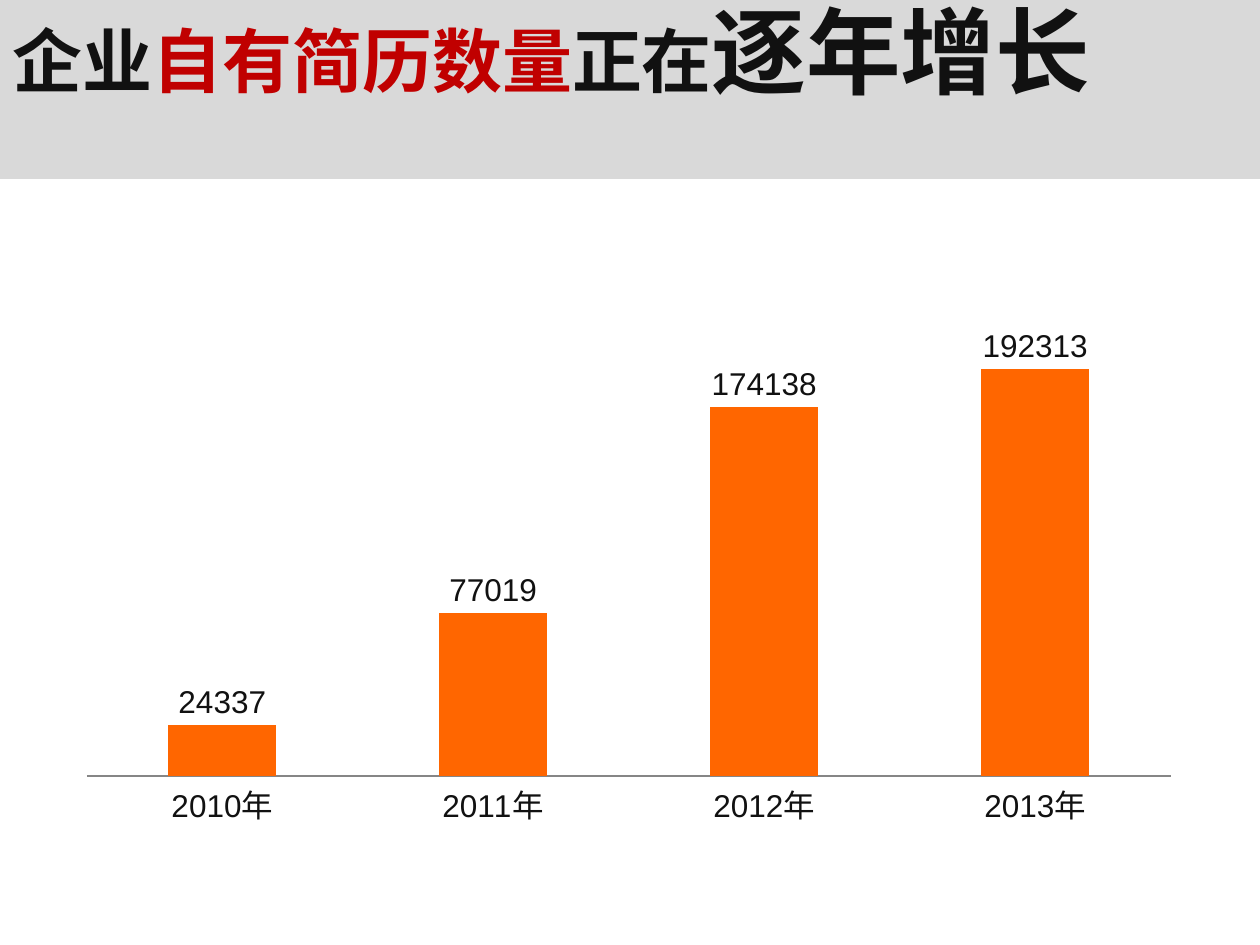
from pptx import Presentation
from pptx.chart.data import CategoryChartData
from pptx.dml.color import RGBColor
from pptx.enum.chart import XL_CHART_TYPE as ChartType, XL_LABEL_POSITION as LabelPosition, XL_TICK_MARK as TickMark
from pptx.enum.text import MSO_ANCHOR as Anchor, MSO_AUTO_SIZE as AutoSize, PP_ALIGN as Align
from pptx.oxml.ns import qn
from pptx.util import Pt

INK = RGBColor(0x11, 0x11, 0x11)
RED = RGBColor(0xC0, 0x00, 0x00)
ORANGE = RGBColor(0xFF, 0x66, 0x00)
BAND_GREY = RGBColor(0xD9, 0xD9, 0xD9)
AXIS_GREY = RGBColor(0x86, 0x86, 0x86)
TITLE_FONT = "Noto Sans CJK SC"

deck = Presentation()
deck.slide_width, deck.slide_height = Pt(720), Pt(540)
page = deck.slides.add_slide(deck.slide_layouts[5])

data = CategoryChartData()
data.categories = ["2010年", "2011年", "2012年", "2013年"]
data.add_series("Series 1", [24337, 77019, 174138, 192313])
chart = page.shapes.add_chart(
    ChartType.COLUMN_CLUSTERED, Pt(36.7), Pt(133.9), Pt(645.1), Pt(345.6), data
).chart
chart.has_legend = False
chart.has_title = False
chart.font.name = "Arial"
chart.font.size = Pt(18)
chart.font.color.rgb = INK

category_axis = chart.category_axis
category_axis.major_tick_mark = TickMark.NONE
category_axis.format.line.color.rgb = AXIS_GREY
category_axis.format.line.width = Pt(0.75)

value_axis = chart.value_axis
value_axis.minimum_scale = 0
value_axis.maximum_scale = 250000
value_axis.has_major_gridlines = False
value_axis.visible = False

plot = chart.plots[0]
plot.gap_width = 150
plot.overlap = -25
plot.vary_by_categories = False
plot.series[0].format.fill.solid()
plot.series[0].format.fill.fore_color.rgb = ORANGE
plot.has_data_labels = True
plot.data_labels.show_value = True
plot.data_labels.position = LabelPosition.OUTSIDE_END

title = page.shapes.title
title.left, title.top, title.width, title.height = Pt(0), Pt(0), Pt(720), Pt(102.2)
title.fill.solid()
title.fill.fore_color.rgb = BAND_GREY
frame = title.text_frame
frame.auto_size = AutoSize.NONE
frame.word_wrap = True
frame.vertical_anchor = Anchor.TOP
para = frame.paragraphs[0]
para.alignment = Align.LEFT
para.line_spacing = 0.9

for text, size, color in [
    ("企业", 40, INK),
    ("自有简历数量", 40, RED),
    ("正在", 40, INK),
    ("逐年增长", 54, INK),
]:
    span = para.add_run()
    span.text = text
    span.font.size = Pt(size)
    span.font.bold = True
    span.font.color.rgb = color
    span.font.name = TITLE_FONT
    east_asian = span.font._element.makeelement(qn("a:ea"), {"typeface": TITLE_FONT})
    span.font._element.append(east_asian)

deck.save("out.pptx")
